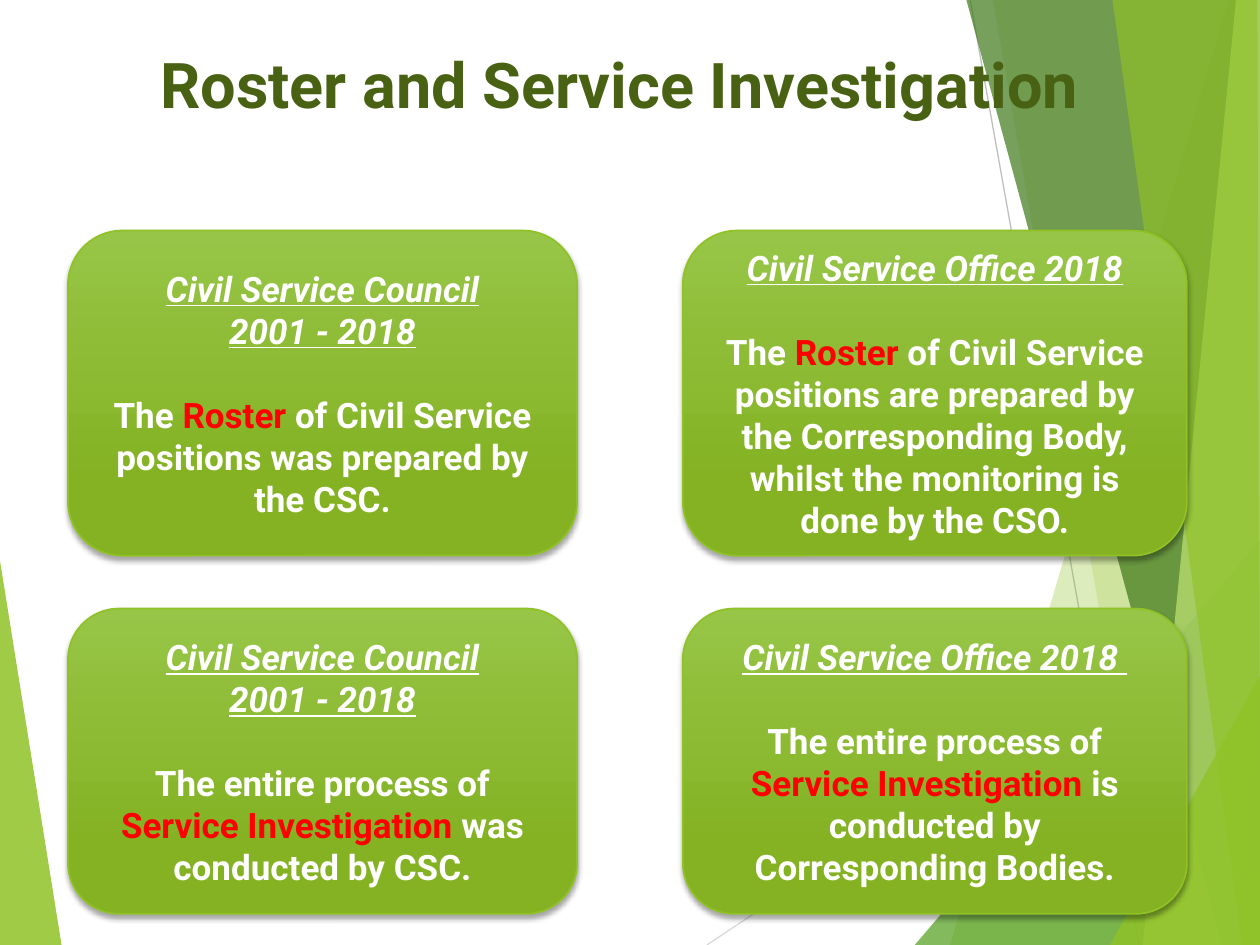
"""Build the slide that compares roster and service investigation duties."""
import pptx
import pptx.util
import pptx.dml.color
import pptx.enum.shapes
import pptx.enum.text
import pptx.oxml.ns
import pptx.oxml.xmlchemy

HUES = {"lime": "90C226", "leaf": "54A021", "pine": "3F7819", "pale": "C0E474",
        "top": "97C547", "base": "84B223", "title": "486113", "white": "FFFFFF",
        "red": "FF0000", "grey": "D9D9D9", "ash": "BFBFBF", "black": "000000"}
FONT = "Roboto"
TITLE = "Roster and Service Investigation "
COUNCIL = ["Civil Service Council", "2001 - 2018"]
OFFICE = "Civil Service Office 2018"
CARDS = [
    [(COUNCIL, "The ", "Roster", " of Civil Service positions was prepared by the CSC."),
     ([OFFICE], "The ", "Roster", " of Civil Service positions are prepared by the "
      "Corresponding Body, whilst the monitoring is done by the CSO.")],
    [(COUNCIL, "The entire process of ", "Service Investigation", " was conducted by CSC."),
     ([OFFICE + " "], "The entire process of ", "Service Investigation",
      " is conducted by Corresponding Bodies.")],
]
COLS = [(5.4, 40.4), (54.2, 40)]
ROWS = [(24.4, 34.4), (64.4, 32.3)]
RAYS = [((56.1, 100), (100.1, 60.9), "grey"), ((77, 0), (90.4, 100), "ash")]
SHARDS = [
    ("lime", 85, [(-0.1, 58.5), (4.9, 100.1), (-0.1, 100)]),
    ("lime", 30, [(97.5, 0), (75.4, 100), (100.2, 100.1), (100.1, 0.1)]),
    ("lime", 20, [(78.8, 0), (91.9, 100), (100.1, 100), (100.1, 0)]),
    ("leaf", 72, [(72.6, 100), (100, 57.2), (100.1, 100)]),
    ("pine", 70, [(76.7, 0), (97, 100), (100.1, 100), (100.1, 0)]),
    ("pale", 70, [(98.1, 0), (90.7, 100), (100.1, 100), (100, 0)]),
    ("lime", 65, [(88.3, 0), (98.6, 100), (100, 100), (99.8, 0)]),
    ("lime", 80, [(88.1, 100), (100.1, 71.3), (100.1, 100)]),
]

deck = pptx.Presentation()
deck.slide_width = pptx.util.Inches(10)
deck.slide_height = pptx.util.Inches(7.5)
slide = deck.slides.add_slide(deck.slide_layouts[6])
shapes = slide.shapes
qn = pptx.oxml.ns.qn
node = pptx.oxml.xmlchemy.OxmlElement


def hue(name):
    return pptx.dml.color.RGBColor.from_string(HUES[name])


def spot(x, y):
    return round(deck.slide_width * x / 100), round(deck.slide_height * y / 100)


def write(para, text, size, color, fancy=False):
    run = para.add_run()
    run.text = text
    font = run.font
    font.name, font.size, font.bold = FONT, pptx.util.Pt(size), True
    font.color.rgb = hue(color)
    if fancy:
        font.italic = font.underline = True


def ray(start, end, color):
    line = shapes.add_connector(pptx.enum.shapes.MSO_CONNECTOR.STRAIGHT,
                                *spot(*start), *spot(*end))
    line.line.color.rgb = hue(color)
    line.line.width = pptx.util.Pt(0.75)
    line._element.spPr.append(node("a:effectLst"))


def fade(tint, alpha):
    part = node("a:alpha")
    part.set("val", str(alpha * 1000))
    tint.append(part)


def shard(color, alpha, points):
    first, *rest = [spot(*point) for point in points]
    form = shapes.build_freeform(*first)
    form.add_line_segments(rest, close=True)
    shape = form.convert_to_shape()
    shape.shadow.inherit = False
    shape.line.fill.background()
    shape.fill.solid()
    shape.fill.fore_color.rgb = hue(color)
    fade(shape._element.spPr.find(qn("a:solidFill"))[0], alpha)


def shade(shape):
    shape.shadow.inherit = False
    cast = node("a:outerShdw")
    for key, val in {"blurRad": pptx.util.Pt(3), "dist": pptx.util.Pt(2),
                     "dir": 90 * 60000, "rotWithShape": 0}.items():
        cast.set(key, str(int(val)))
    tint = node("a:srgbClr")
    tint.set("val", HUES["black"])
    fade(tint, 35)
    cast.append(tint)
    shape._element.spPr.find(qn("a:effectLst")).append(cast)


def card(col, row, head, lead, key, tail):
    kind = pptx.enum.shapes.MSO_SHAPE.FLOWCHART_ALTERNATE_PROCESS
    shape = shapes.add_shape(kind, *spot(col[0], row[0]), *spot(col[1], row[1]))
    shape.fill.gradient()
    shape.fill.gradient_angle = 270
    for stop, name, place in zip(shape.fill.gradient_stops, ("top", "base"), (0, 0.78)):
        stop.color.rgb, stop.position = hue(name), place
    shape.line.color.rgb = hue("lime")
    shape.line.width = pptx.util.Pt(1)
    shade(shape)
    frame = shape.text_frame
    frame.word_wrap = True
    frame.vertical_anchor = pptx.enum.text.MSO_ANCHOR.MIDDLE
    top, body = frame.paragraphs[0], frame.add_paragraph()
    top.alignment = body.alignment = pptx.enum.text.PP_ALIGN.CENTER
    body.space_before = pptx.util.Pt(24)
    for nth, text in enumerate(head):
        if nth:
            top.add_line_break()
        write(top, text, 20, "white", True)
    for text, color in ((lead, "white"), (key, "red"), (tail, "white")):
        write(body, text, 20, color)


def title():
    frame = shapes.add_textbox(*spot(-0.2, 1.1), *spot(100, 12.4)).text_frame
    frame.word_wrap = True
    frame.vertical_anchor = pptx.enum.text.MSO_ANCHOR.BOTTOM
    para = frame.paragraphs[0]
    para.alignment = pptx.enum.text.PP_ALIGN.CENTER
    write(para, TITLE, 36, "title")


for item in RAYS:
    ray(*item)
for item in SHARDS:
    shard(*item)
title()
for row, line in zip(ROWS, CARDS):
    for col, item in zip(COLS, line):
        card(col, row, *item)
deck.save("out.pptx")
